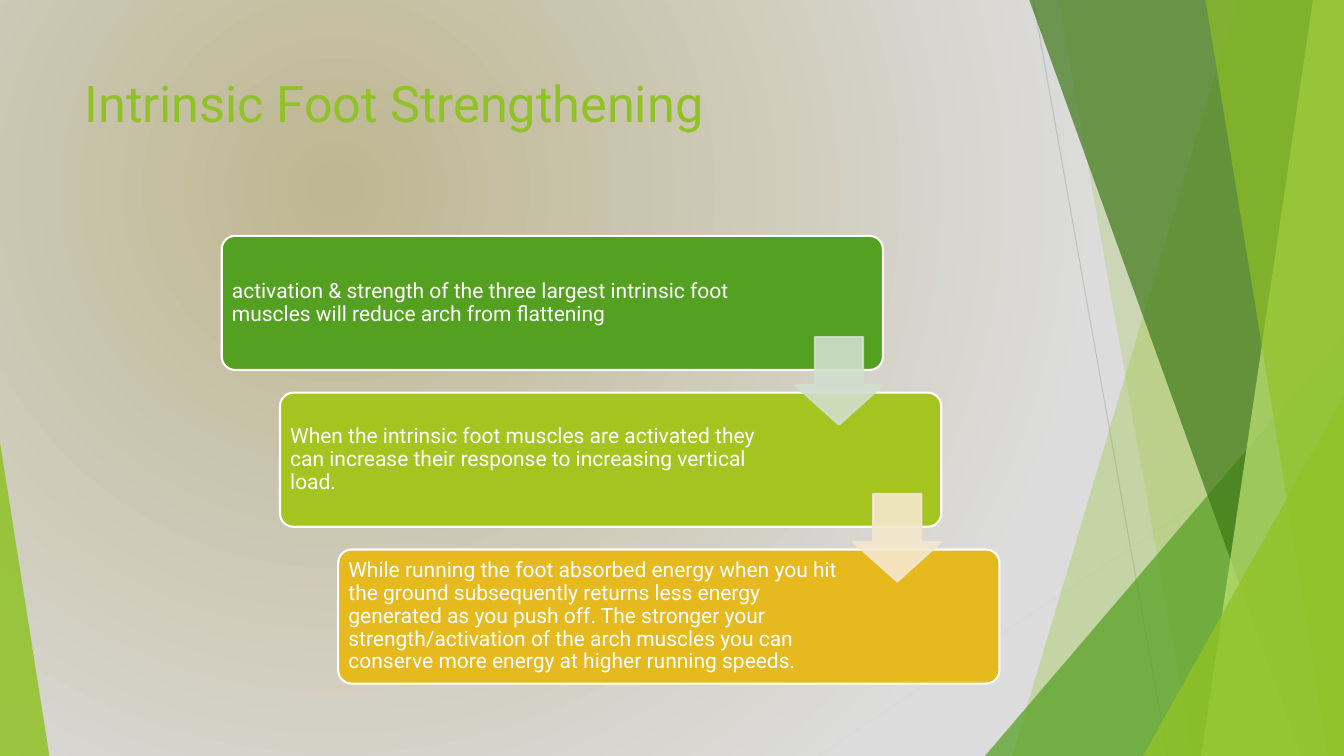
"""Build the intrinsic foot strengthening slide with a stepped three-card flow."""
from lxml import etree
from pptx import Presentation
from pptx import util as u
from pptx.dml.color import RGBColor
from pptx.enum import shapes, text
from pptx.oxml.ns import qn

FONT = "Roboto"
SLIDE_W, SLIDE_H = 960, 540
GREEN = "90C226"
TITLE = "Intrinsic Foot Strengthening"
GLOW = [("BFB792", 1, 17), ("DCDCDC", 100, 100)]
GLOW_CENTRE = {"l": 50, "t": 50, "r": 100, "b": 100}
RAYS = [((738, 0), (834, 540), "BFBFBF"), ((960, 290), (584.5, 540), "D9D9D9")]
# Each facet: top-left x, bottom-left x, colour, opacity, or a triangle box.
FACETS = [
    ("band", (884, 723), GREEN, 30),
    ("band", (756, 852), GREEN, 20),
    ("triangle", (703.5, 240, 256.5, 300), GREEN and "54A021", 72),
    ("band", (735, 929.5), "3F7819", 70),
    ("band", (938, 858), "C0E474", 70),
    ("band", (861, 949), GREEN, 65),
    ("triangle", (816.5, 283, 143.5, 257), GREEN, 80),
    ("triangle", (0, 316, 35.3, 224), GREEN, 85),
]
CARDS = [
    ("activation & strength of the three largest intrinsic foot muscles will "
     "reduce arch from flattening", "54A021", 102.5),
    ("When the intrinsic foot muscles are activated they can increase their "
     "response to increasing vertical load.", "A5C41F", 109),
    ("While running the foot absorbed energy when you hit the ground "
     "subsequently returns less energy generated as you push off. The stronger "
     "your strength/activation of the arch muscles you can conserve more energy "
     "at higher running speeds.", "E6B91E", 109),
]
ARROWS = ["D1DFCD", "F5E7CD"]
CARD_X, CARD_Y, CARD_W, CARD_H = 158.4, 168.5, 472.3, 95.8
STEP_X, STEP_Y = 41.6, 112
ARROW_DX, ARROW_DY, ARROW_SIZE = 409.6, 72.3, 62.6


def rgb(value):
    return RGBColor.from_string(value)


def assign(target, values):
    for name, value in values.items():
        setattr(target, name, value)


def set_opacity(fill_owner, percent):
    for colour in fill_owner.iter(qn("a:srgbClr")):
        etree.SubElement(colour, qn("a:alpha"), val=str(percent * 1000))


def paint(shape, colour, outline=None, opacity=100):
    shape.shadow.inherit = False
    shape.fill.solid()
    shape.fill.fore_color.rgb = rgb(colour)
    if outline:
        shape.line.color.rgb = rgb(outline)
        shape.line.width = u.Pt(1.5)
    else:
        shape.line.fill.background()
    if opacity < 100:
        set_opacity(shape.fill._xPr, opacity)


def add_preset(slide, preset, box, adjustments):
    shape = slide.shapes.add_shape(preset, *map(u.Pt, box))
    for index, value in enumerate(adjustments):
        shape.adjustments[index] = value
    return shape


def write(shape, words, size, colour, frame_format, paragraph_format):
    frame = shape.text_frame
    assign(frame, {"word_wrap": True, **frame_format})
    paragraph = frame.paragraphs[0]
    paragraph.text = words
    assign(paragraph, {"alignment": text.PP_ALIGN.LEFT, **paragraph_format})
    font = paragraph.runs[0].font
    assign(font, {"name": FONT, "size": u.Pt(size)})
    font.color.rgb = rgb(colour)


def add_glow(slide):
    fill = slide.background.fill
    fill.gradient()
    gradient = slide.background._cSld.find(".//" + qn("a:gradFill"))
    for part in list(gradient):
        gradient.remove(part)
    stops = etree.SubElement(gradient, qn("a:gsLst"))
    for colour, position, opacity in GLOW:
        stop = etree.SubElement(stops, qn("a:gs"), pos=str(position * 1000))
        tint = etree.SubElement(stop, qn("a:srgbClr"), val=colour)
        if opacity < 100:
            etree.SubElement(tint, qn("a:alpha"), val=str(opacity * 1000))
    circle = etree.SubElement(gradient, qn("a:path"))
    circle.set("path", "circle")
    centre = {side: str(share * 1000) for side, share in GLOW_CENTRE.items()}
    etree.SubElement(circle, qn("a:fillToRect"), centre)


def add_rays(slide):
    for start, end, colour in RAYS:
        ray = slide.shapes.add_connector(
            shapes.MSO_CONNECTOR.STRAIGHT, *map(u.Pt, start + end))
        ray.line.color.rgb = rgb(colour)
        ray.line.width = u.Pt(0.75)
        etree.SubElement(ray._element.spPr, qn("a:effectLst"))


def add_facets(slide):
    for kind, place, colour, opacity in FACETS:
        if kind == "band":
            top_x, bottom_x = place
            outline = slide.shapes.build_freeform(
                u.Pt(top_x), u.Pt(-0.7), scale=1)
            corners = [(SLIDE_W, -0.7), (SLIDE_W, SLIDE_H), (bottom_x, SLIDE_H)]
            outline.add_line_segments(
                [(u.Pt(x), u.Pt(y)) for x, y in corners], close=True)
            facet = outline.convert_to_shape()
        else:
            apex = 1 if place[0] else 0
            facet = add_preset(
                slide, shapes.MSO_SHAPE.ISOSCELES_TRIANGLE, place, [apex])
        paint(facet, colour, opacity=opacity)


def add_flow(slide):
    for index, (words, colour, right) in enumerate(CARDS):
        box = (CARD_X + index * STEP_X, CARD_Y + index * STEP_Y, CARD_W, CARD_H)
        card = add_preset(slide, shapes.MSO_SHAPE.ROUNDED_RECTANGLE, box, [0.1])
        paint(card, colour, "FFFFFF")
        inset = u.Pt(4.5)
        write(card, words, 15, "FFFFFF",
              {"vertical_anchor": text.MSO_ANCHOR.MIDDLE, "margin_left": inset,
               "margin_top": inset, "margin_bottom": inset,
               "margin_right": u.Pt(right)},
              {"line_spacing": 0.9})
    for index, colour in enumerate(ARROWS):
        box = (CARD_X + index * STEP_X + ARROW_DX,
               CARD_Y + index * STEP_Y + ARROW_DY, ARROW_SIZE, ARROW_SIZE)
        arrow = add_preset(slide, shapes.MSO_SHAPE.DOWN_ARROW, box, [0.55, 0.45])
        paint(arrow, colour, colour, 90)
        set_opacity(arrow.line._ln, 90)


def main():
    deck = Presentation()
    assign(deck, {"slide_width": u.Pt(SLIDE_W), "slide_height": u.Pt(SLIDE_H)})
    slide = deck.slides.add_slide(deck.slide_layouts[6])
    add_glow(slide)
    add_rays(slide)
    add_facets(slide)
    title = slide.shapes.add_textbox(*map(u.Pt, (53.3, 48, 677, 104)))
    write(title, TITLE, 36, GREEN,
          {"vertical_anchor": text.MSO_ANCHOR.TOP}, {})
    add_flow(slide)
    deck.save("out.pptx")


if __name__ == "__main__":
    main()
